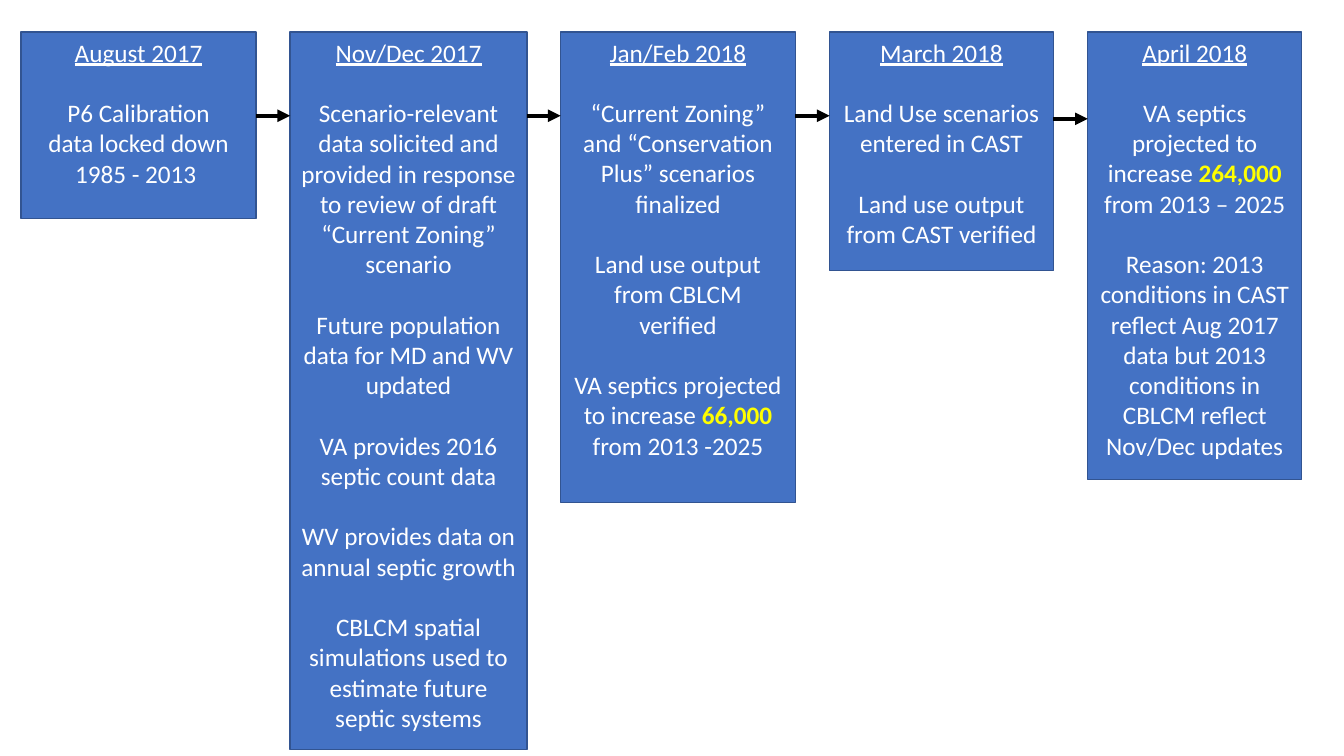
from itertools import pairwise

from lxml.etree import SubElement
from pptx import Presentation
from pptx.dml.color import RGBColor
from pptx.enum.shapes import MSO_CONNECTOR as Connector, MSO_SHAPE as Shape
from pptx.enum.text import MSO_ANCHOR as Anchor, PP_ALIGN as Align
from pptx.oxml.ns import qn
from pptx.util import Pt

# Each stage holds blocks of paragraphs; in a tuple the second run is highlighted.
STAGES = [
    {"title": "August 2017", "left": 15.1, "width": 167.8, "height": 133.2, "blocks": [
        ["P6 Calibration", "data locked down", "1985 - 2013 "],
    ]},
    {"title": "Nov/Dec 2017", "left": 207.2, "width": 169.2, "height": 512.6, "blocks": [
        ["Scenario-relevant data solicited and provided in response to review of draft",
         "“Current Zoning” scenario"],
        ["Future population data for MD and WV updated"],
        ["VA provides 2016 septic count data"],
        ["WV provides data on annual septic growth"],
        ["CBLCM spatial simulations used to estimate future septic systems"],
    ]},
    {"title": "Jan/Feb 2018", "left": 400.4, "width": 167.8, "height": 336.2, "blocks": [
        ["“Current Zoning” and “Conservation Plus” scenarios", "finalized"],
        ["Land use output from CBLCM", "verified"],
        [("VA septics projected to increase ", "66,000", " from 2013 -2025")],
    ]},
    {"title": "March 2018", "left": 592.6, "width": 159.8, "height": 170.6, "blocks": [
        ["Land Use scenarios entered in CAST"],
        ["Land use output from CAST verified"],
    ]},
    {"title": "April 2018", "left": 777, "width": 152.9, "height": 319.7, "blocks": [
        [("VA septics projected to increase ", "264,000 ", "from 2013 – 2025")],
        ["Reason: 2013 conditions in CAST reflect Aug 2017 data but 2013 conditions "
         "in CBLCM reflect Nov/Dec updates"],
    ]},
]
ARROW_HEIGHTS = [82.7, 82.7, 82.7, 84.9]
COLOURS = {"box": "4472C4", "edge": "325491", "arrow": "000000",
           "text": "FFFFFF", "highlight": "FFFF00"}
BOX_TOP = 22.8
BLOCK_GAP = 21.6
FRAME_FORMAT = {"word_wrap": True, "vertical_anchor": Anchor.TOP,
                "margin_left": Pt(7.2), "margin_right": Pt(7.2),
                "margin_top": Pt(3.6), "margin_bottom": Pt(3.6)}
FONT_FORMAT = {"name": "Calibri", "size": Pt(18)}


def colour(name):
    return RGBColor.from_string(COLOURS[name])


def apply_format(target, values):
    for name, value in values.items():
        setattr(target, name, value)


def add_paragraph(paragraph, content, gap=0, underline=False):
    apply_format(paragraph, {"alignment": Align.CENTER, "space_before": Pt(gap)})
    runs = (content,) if isinstance(content, str) else content
    for index, text in enumerate(runs):
        highlighted = index == 1
        run = paragraph.add_run()
        run.text = text
        apply_format(run.font, {**FONT_FORMAT, "underline": underline, "bold": highlighted})
        run.font.color.rgb = colour("highlight" if highlighted else "text")


def add_stage(slide, stage):
    shape = slide.shapes.add_shape(Shape.RECTANGLE, Pt(stage["left"]), Pt(BOX_TOP),
                                   Pt(stage["width"]), Pt(stage["height"]))
    shape.shadow.inherit = False
    shape.fill.solid()
    shape.fill.fore_color.rgb = colour("box")
    shape.line.color.rgb = colour("edge")
    shape.line.width = Pt(1)
    frame = shape.text_frame
    apply_format(frame, FRAME_FORMAT)
    add_paragraph(frame.paragraphs[0], stage["title"], underline=True)
    for block in stage["blocks"]:
        for index, content in enumerate(block):
            add_paragraph(frame.add_paragraph(), content, 0 if index else BLOCK_GAP)


def add_arrow(slide, start, end, height):
    arrow = slide.shapes.add_connector(Connector.STRAIGHT, Pt(start), Pt(height),
                                       Pt(end), Pt(height))
    arrow.line.color.rgb = colour("arrow")
    arrow.line.width = Pt(3)
    SubElement(arrow.line._get_or_add_ln(), qn("a:tailEnd"), type="triangle")
    SubElement(arrow._element.spPr, qn("a:effectLst"))


def main():
    presentation = Presentation()
    apply_format(presentation, {"slide_width": Pt(960), "slide_height": Pt(540)})
    slide = presentation.slides.add_slide(presentation.slide_layouts[6])
    for stage in STAGES:
        add_stage(slide, stage)
    for (stage, following), height in zip(pairwise(STAGES), ARROW_HEIGHTS):
        add_arrow(slide, stage["left"] + stage["width"], following["left"], height)
    presentation.save("out.pptx")


if __name__ == "__main__":
    main()
